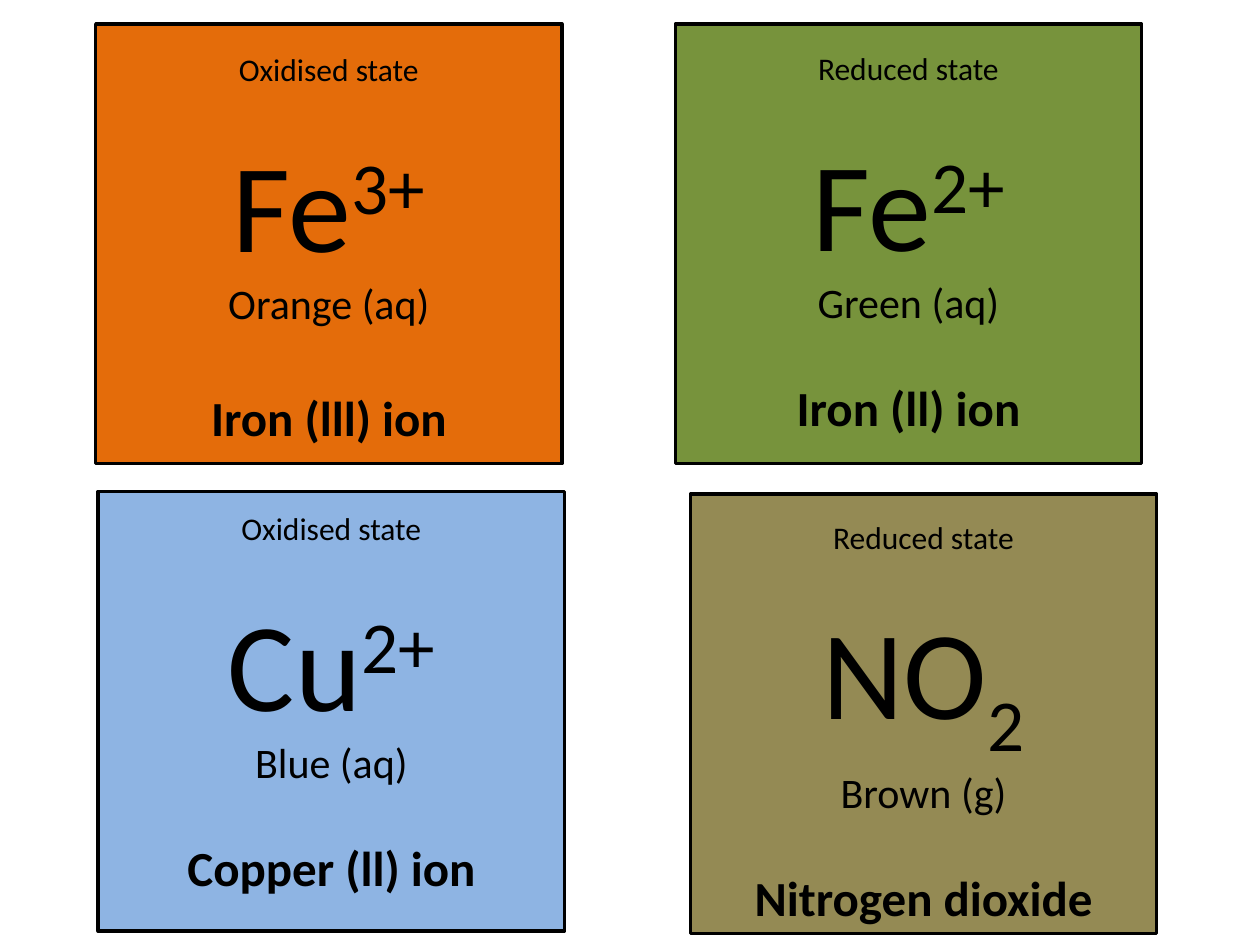
"""Build a slide of four cards showing coloured ions and oxides by redox state."""
import pptx
import pptx.dml.color
import pptx.enum.shapes
import pptx.enum.text
import pptx.util
from pptx.util import Inches

COLOURS = {
    "orange": "E46C0A",
    "green": "77933C",
    "blue": "8EB4E3",
    "brown": "948A54",
    "black": "000000",
}
CARD_WIDTH, CARD_HEIGHT = 3.7, 3.49
TEXT_WIDTH = 4.02
SUPERSCRIPT, SUBSCRIPT = 30000, -25000

cards = [
    ("orange", 0.76, 0.19, 0.35, 3.33, 34, "Oxidised state", "Fe", "3+", SUPERSCRIPT, "Orange (aq)", "Iron (lll) ion"),
    ("green", 5.36, 0.19, 0.34, 3.2, 29, "Reduced state", "Fe", "2+", SUPERSCRIPT, "Green (aq)", "Iron (ll) ion"),
    ("blue", 0.78, 3.9, 3.99, 3.2, 29, "Oxidised state", "Cu", "2+", SUPERSCRIPT, "Blue (aq)", "Copper (ll) ion"),
    ("brown", 5.48, 3.92, 4.06, 3.2, 29, "Reduced state", "NO", "2", SUBSCRIPT, "Brown (g)", "Nitrogen dioxide"),
]


def rgb(name):
    return pptx.dml.color.RGBColor.from_string(COLOURS[name])


presentation = pptx.Presentation()
presentation.slide_width = Inches(10)
presentation.slide_height = Inches(7.5)
slide = presentation.slides.add_slide(presentation.slide_layouts[6])

for colour, left, top, text_top, text_height, name_gap, state, symbol, script, baseline, appearance, name in cards:
    card = slide.shapes.add_shape(
        pptx.enum.shapes.MSO_SHAPE.RECTANGLE,
        Inches(left), Inches(top), Inches(CARD_WIDTH), Inches(CARD_HEIGHT),
    )
    card.shadow.inherit = False
    card.fill.solid()
    card.fill.fore_color.rgb = rgb(colour)
    card.line.color.rgb = rgb("black")
    card.line.width = pptx.util.Pt(2)

    text_left = left - (TEXT_WIDTH - CARD_WIDTH) / 2
    text_box = slide.shapes.add_textbox(
        Inches(text_left), Inches(text_top), Inches(TEXT_WIDTH), Inches(text_height)
    )
    text_frame = text_box.text_frame
    text_frame.word_wrap = True
    text_frame.text = "\n".join([state, symbol, appearance, name])

    script_run = text_frame.paragraphs[1].add_run()
    script_run.text = script
    script_run._r.get_or_add_rPr().set("baseline", str(baseline))

    sizes, gaps = (18, 72, 24, 28), (0, 22, 0, name_gap)
    for paragraph, size, gap in zip(text_frame.paragraphs, sizes, gaps):
        paragraph.alignment = pptx.enum.text.PP_ALIGN.CENTER
        paragraph.space_before = pptx.util.Pt(gap)
        for run in paragraph.runs:
            run.font.name = "Calibri"
            run.font.size = pptx.util.Pt(size)
            run.font.color.rgb = rgb("black")
    text_frame.paragraphs[3].runs[0].font.bold = True

presentation.save("out.pptx")
